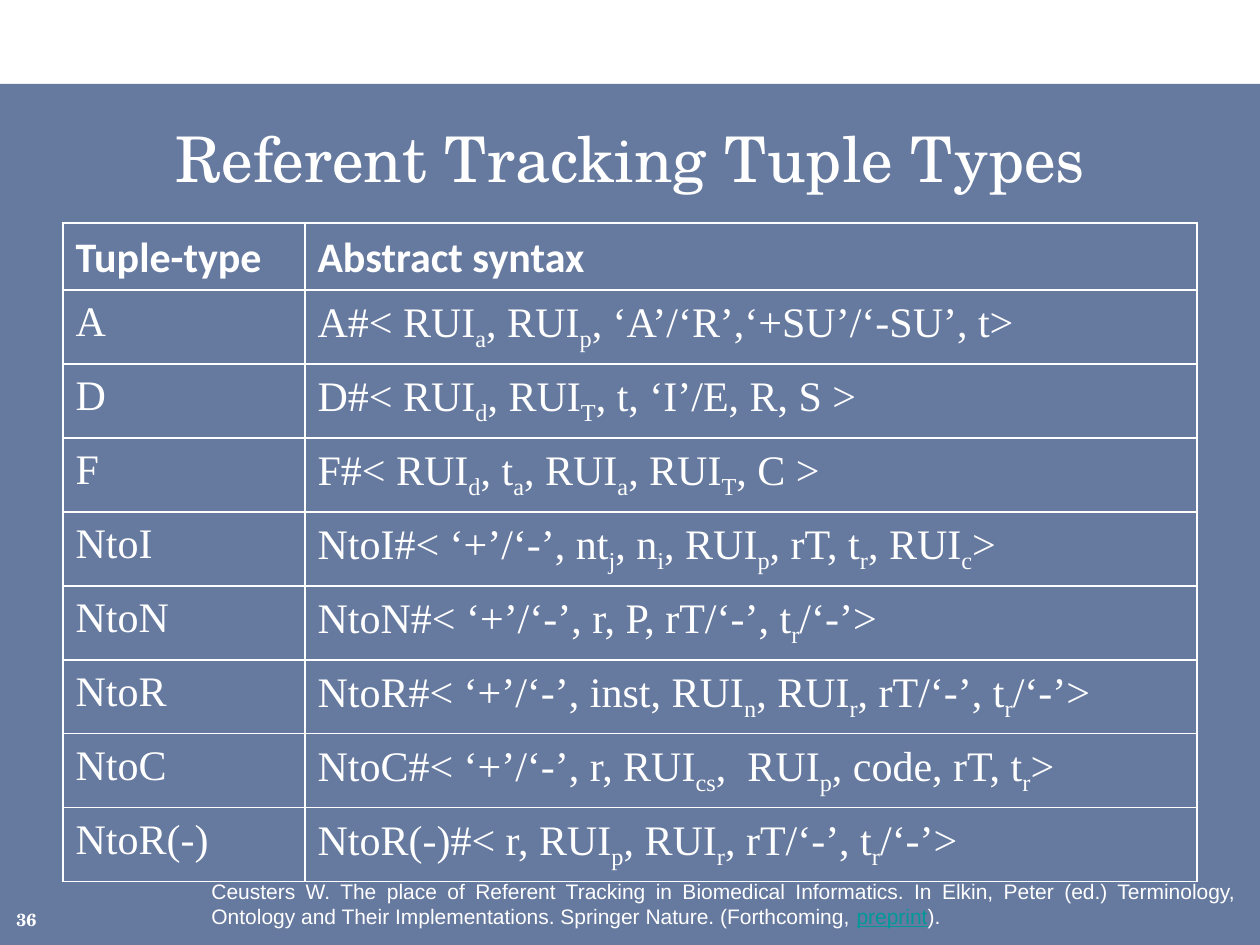
from lxml import etree
from pptx import Presentation
from pptx.dml.color import RGBColor
from pptx.enum.shapes import MSO_SHAPE
from pptx.enum.text import MSO_ANCHOR, PP_ALIGN
from pptx.oxml.ns import qn
from pptx.util import Emu, Pt

RECT = MSO_SHAPE.RECTANGLE
MIDDLE = MSO_ANCHOR.MIDDLE
LEFT, CENTER, JUSTIFY = PP_ALIGN.LEFT, PP_ALIGN.CENTER, PP_ALIGN.JUSTIFY

SCALE = 914400 / 126  # EMU per px
COLORS = {"panel": "002060", "text": "FFFFFF", "link": "009999"}
SERIF, HEAD, BODY, NOTE = "TeX Gyre Schola", "Calibri", "Times New Roman", "Arial"

# Subscripts stand between tildes
ROWS = [
    ("Tuple-type", "Abstract syntax"),
    ("A", "A#< RUI~a~, RUI~p~, ‘A’/‘R’,‘+SU’/‘-SU’, t>"),
    ("D", "D#< RUI~d~, RUI~T~, t, ‘I’/E, R, S >"),
    ("F", "F#< RUI~d~, t~a~, RUI~a~, RUI~T~, C >"),
    ("NtoI", "NtoI#< ‘+’/‘-’, nt~j~, n~i~, RUI~p~, rT, t~r~, RUI~c~>"),
    ("NtoN", "NtoN#< ‘+’/‘-’, r, P, rT/‘-’, t~r~/‘-’>"),
    ("NtoR", "NtoR#< ‘+’/‘-’, inst, RUI~n~, RUI~r~, rT/‘-’, t~r~/‘-’>"),
    ("NtoC", "NtoC#< ‘+’/‘-’, r, RUI~cs~,  RUI~p~, code, rT, t~r~>"),
    ("NtoR(-)", "NtoR(-)#< r, RUI~p~, RUI~r~, rT/‘-’, t~r~/‘-’>"),
]
COLUMNS = (242, 892)
HEADER_HEIGHT, ROW_HEIGHT = 67, 69


def px(n):
    return Emu(round(n * SCALE))


def box(*lengths):
    return [px(n) for n in lengths]


def rgb(name):
    return RGBColor.from_string(COLORS[name])


def add_run(p, text, font, size, color="text", bold=False, underline=False):
    r = p.add_run()
    r.text = text
    r.font.name, r.font.size = font, Pt(size)
    r.font.bold, r.font.underline = bold, underline
    r.font.color.rgb = rgb(color)
    return r


def add_panel(s):
    sp = s.shapes.add_shape(RECT, *box(0, 84, 1260, 861))
    sp.shadow.inherit = False
    sp.fill.solid()
    sp.fill.fore_color.rgb = rgb("panel")
    color = sp.fill._xPr.find(qn("a:solidFill"))[0]
    etree.SubElement(color, qn("a:alpha"), val="60000")
    sp.line.fill.background()
    s.shapes._spTree.insert(2, sp._element)  # behind the title


def set_title(s, text):
    sp = s.shapes.title
    sp.left, sp.top, sp.width, sp.height = box(32, 105, 1197, 105)
    tf = sp.text_frame
    tf.vertical_anchor = MIDDLE
    p = tf.paragraphs[0]
    p.alignment = CENTER
    add_run(p, text, SERIF, 36)


def add_text(s, place, align):
    tf = s.shapes.add_textbox(*box(*place)).text_frame
    tf.word_wrap = True
    p = tf.paragraphs[0]
    p.alignment = align
    return tf, p


def set_borders(cell):
    tcPr = cell._tc.get_or_add_tcPr()
    for i, side in enumerate(("lnL", "lnR", "lnT", "lnB")):
        ln = etree.Element(qn("a:" + side), w=str(Pt(1)))
        fill = etree.SubElement(ln, qn("a:solidFill"))
        etree.SubElement(fill, qn("a:srgbClr"), val=COLORS["text"])
        tcPr.insert(i, ln)


def fill_cell(cell, text, header):
    cell.fill.background()
    set_borders(cell)
    p = cell.text_frame.paragraphs[0]
    p.alignment = LEFT
    p.line_spacing = 1.07
    p.space_after = Pt(3)
    for i, part in enumerate(text.split("~")):
        r = add_run(p, part, HEAD if header else BODY, 24, bold=header)
        if i % 2:
            r.font._element.set("baseline", "-25000")


def add_tuple_table(s):
    height = HEADER_HEIGHT + ROW_HEIGHT * (len(ROWS) - 1)
    place = box(63, 223, sum(COLUMNS), height)
    table = s.shapes.add_table(len(ROWS), len(COLUMNS), *place).table
    table.horz_banding = table.first_row = False
    for column, width in zip(table.columns, COLUMNS):
        column.width = px(width)
    for i, texts in enumerate(ROWS):
        table.rows[i].height = px(ROW_HEIGHT if i else HEADER_HEIGHT)
        for j, text in enumerate(texts):
            fill_cell(table.cell(i, j), text, header=i == 0)


def main():
    prs = Presentation()
    prs.slide_width, prs.slide_height = box(1260, 945)
    s = prs.slides.add_slide(prs.slide_layouts[5])

    # Background panel and title
    add_panel(s)
    set_title(s, "Referent Tracking Tuple Types")

    # Slide number
    tf, p = add_text(s, (4, 903, 49, 32), LEFT)
    tf.vertical_anchor = MIDDLE
    add_run(p, "36", SERIF, 10, bold=True)

    # Tuple types
    add_tuple_table(s)

    # Citation
    tf, p = add_text(s, (199, 872, 1050, 63), JUSTIFY)
    add_run(p, "Ceusters W. The place of Referent Tracking in Biomedical Informatics. "
               "In Elkin, Peter (ed.) Terminology, Ontology and Their Implementations. "
               "Springer Nature. (Forthcoming, ", NOTE, 12)
    add_run(p, "preprint", NOTE, 12, color="link", underline=True)
    add_run(p, ").", NOTE, 12)

    prs.save("out.pptx")


if __name__ == "__main__":
    main()
